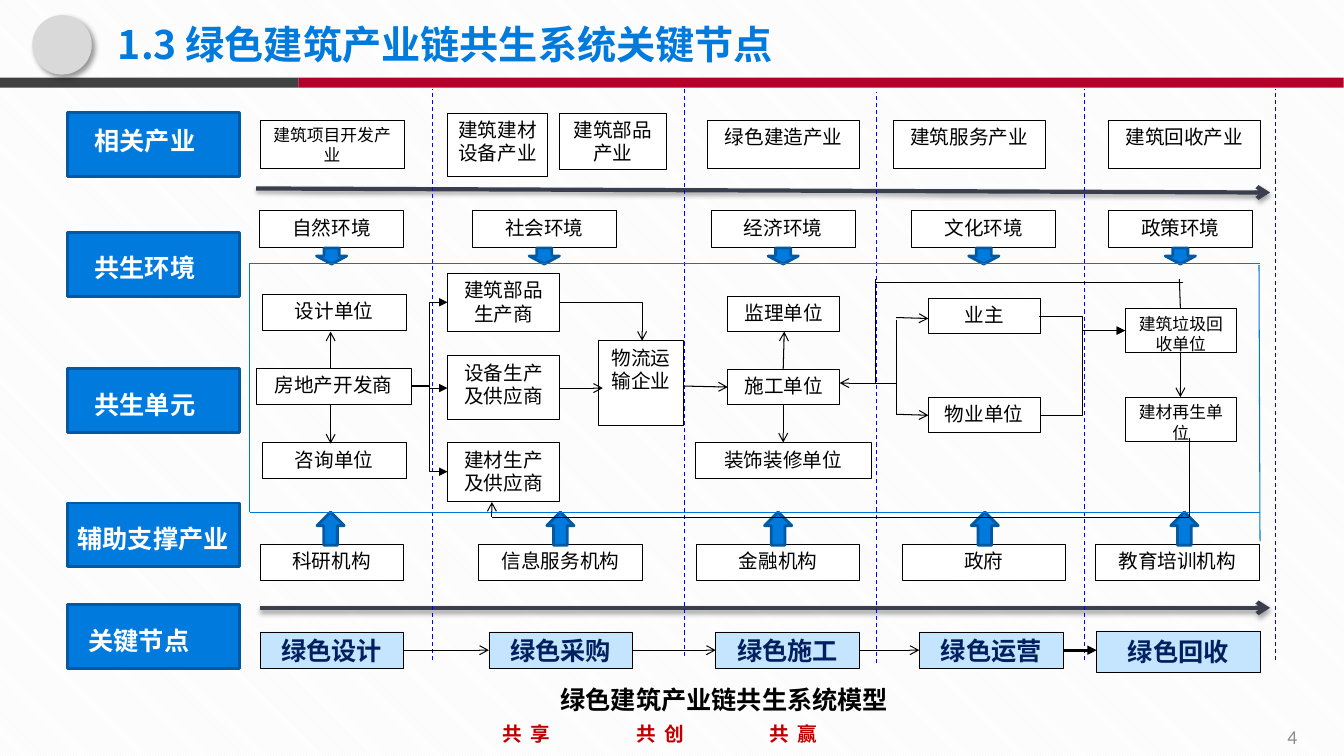
from itertools import pairwise

from lxml import etree
from pptx import Presentation
from pptx import util as u
from pptx.dml.color import RGBColor
from pptx.enum import dml, lang, shapes, text
from pptx.oxml import ns

CELL = 0.1
NOTO, CALIBRI = "Noto Sans CJK SC", "Calibri"
BLACK, WHITE = RGBColor(0, 0, 0), RGBColor(255, 255, 255)
BLUE, BLUE_EDGE = RGBColor(0x00, 0x7A, 0xDD), RGBColor(0x00, 0x5A, 0xA3)
FRAME_BLUE, DASH_BLUE = RGBColor(0x00, 0x77, 0xD8), RGBColor(0, 0, 0xFF)
PALE_BLUE, NAVY = RGBColor(0xC5, 0xE5, 0xFF), RGBColor(0x00, 0x20, 0x60)
CRIMSON, RED = RGBColor(0xB5, 0x00, 0x29), RGBColor(0xC0, 0, 0)
CHARCOAL, SLATE = RGBColor(0x40, 0x40, 0x40), RGBColor(0x3B, 0x3E, 0x4D)
SILVER, GREY = RGBColor(0xD9, 0xD9, 0xD9), RGBColor(0x8C, 0x8C, 0x8C)
HATCH = RGBColor(0xF2, 0xF2, 0xF2)
RECT, ELBOW = shapes.MSO_SHAPE.RECTANGLE, shapes.MSO_CONNECTOR.ELBOW
STRAIGHT = shapes.MSO_CONNECTOR.STRAIGHT
LEFT, CENTER, RIGHT = text.PP_ALIGN.LEFT, text.PP_ALIGN.CENTER, text.PP_ALIGN.RIGHT

LABELS = [("相关产业", 11.2, 8.4, 11.9), ("共生环境", 23.1, 8.4, 24.5),
          ("共生单元", 36.6, 8.4, 38.1), ("辅助支撑产业", 49.9, 6.7, 51.4),
          ("关键节点", 60, 7.8, 61.5)]
INDUSTRIES = [("建筑项目开发产业", 25.8, 11.9, 14.3, 4.8, 12),
              ("建筑建材设备产业", 44.4, 11.2, 9.9, 6.3, 14),
              ("建筑部品产业", 55.5, 11.2, 10.6, 5.6, 14),
              ("绿色建造产业", 70.2, 11.9, 15.1, 4.8, 14),
              ("建筑服务产业", 88.6, 11.9, 15.1, 4.8, 14),
              ("建筑回收产业", 110, 11.9, 15, 4.8, 14)]
ENVIRONMENTS = [("自然环境", 32.9), ("社会环境", 54), ("经济环境", 77.7),
                ("文化环境", 97.6), ("政策环境", 117.1)]
UNITS = [("设计单位", 26, 29.2, 14.3, 3.6, 14), ("房地产开发商", 25.4, 36.5, 15.4, 3.6, 14),
         ("咨询单位", 26, 43.9, 14.3, 3.6, 14), ("建筑部品生产商", 44.4, 27.1, 11.1, 5.8, 14),
         ("设备生产及供应商", 44.4, 35.3, 11.1, 6.3, 14),
         ("建材生产及供应商", 44.4, 43.9, 11.1, 5.8, 14),
         ("物流运输企业", 59.4, 33.8, 8.4, 8.4, 14), ("监理单位", 72.2, 29.4, 11.1, 3.5, 14),
         ("施工单位", 72.2, 36.6, 11.1, 3.5, 14), ("装饰装修单位", 69, 43.9, 17.4, 3.6, 14),
         ("业主", 92.1, 29.6, 11.1, 3.5, 14), ("物业单位", 92.1, 39.4, 11.1, 3.5, 14),
         ("建筑垃圾回收单位", 111.6, 30.6, 11.1, 4.4, 12),
         ("建材再生单位", 111.6, 39.4, 11.1, 4.4, 12)]
SUPPORTS = [("科研机构", 32.9, 14.2, 32.8), ("信息服务机构", 55.6, 16.2, 55.6),
            ("金融机构", 77.2, 16.2, 77.2), ("政府", 97.6, 16.2, 97.7),
            ("教育培训机构", 116.8, 16.2, 117.5)]
KEY_NODES = [("绿色设计", 25.8, 62.7, 14.2, 3.6), ("绿色采购", 48.5, 62.7, 14.2, 3.6),
             ("绿色施工", 71, 62.7, 14.3, 3.6), ("绿色运营", 91.2, 62.7, 14.3, 3.6),
             ("绿色回收", 108.8, 62.6, 16.2, 4.1)]
DIVIDERS = [(42.9, 8.8), (67.9, 8.4), (126.5, 8.8), (107.6, 8.8), (87, 9.1)]
FRAME = [(24.8, 26.1, 24.8, 50.8), (24.8, 26.1, 125, 26.1),
         (124.9, 26.3, 125, 53.7), (24.8, 50.8, 125, 50.8)]
FLOWS = [(67.9, 38.3, 72.2, 38.4), (77.7, 36.6, 77.8, 32.9), (55.5, 38.5, 59.8, 38.5),
         (32.8, 36.6, 32.8, 32.9), (77.7, 40.1, 77.7, 43.9), (32.8, 40.2, 32.8, 44),
         (88.9, 41.1, 92.1, 41.2), (88.9, 31.5, 92.1, 31.6), (88.9, 38, 83.3, 38),
         (117.1, 35, 117.1, 39.4), (48.8, 51.3, 48.8, 49.8)]
LINKS = [(88.9, 31.7, 88.9, 41.1), (117, 27.7, 117.1, 30.6), (86.8, 28, 117.4, 28),
         (86.9, 27.7, 86.9, 38), (48.8, 51.3, 118, 51.3), (118, 43.5, 118, 51.3)]
BRANCHES = [(40.8, 38.3, 44.4, 30), (40.8, 38.3, 44.4, 46.8), (40.8, 38.3, 44.4, 38.5),
            (103.1, 31.4, 111.6, 32.8), (103.2, 41.2, 111.6, 32.8)]


def cells(*counts):
    """Turn counts of grid cells into slide lengths."""
    return [u.Inches(count * CELL) for count in counts]


def write(shape, words, size, color, bold=False, font=NOTO, align=LEFT,
          anchor=text.MSO_ANCHOR.TOP):
    """Fill a shape with one formatted paragraph."""
    frame = shape.text_frame
    frame.text = words
    frame.word_wrap = True
    frame.auto_size = text.MSO_AUTO_SIZE.NONE
    frame.vertical_anchor = anchor
    para = frame.paragraphs[0]
    para.alignment = align
    for span in para.runs:
        span.font.size, span.font.bold, span.font.name = u.Pt(size), bold, font
        span.font.color.rgb = color
        span.font.language_id = lang.MSO_LANGUAGE_ID.SIMPLIFIED_CHINESE
        if font == NOTO:
            properties = span.font._element
            properties.find(ns.qn("a:latin")).addnext(
                properties.makeelement(ns.qn("a:ea"), {"typeface": font}))
    return para


def add_text(slide, area, words, *style, **options):
    """Add a text box."""
    return write(slide.shapes.add_textbox(*cells(*area)), words, *style, **options)


def add_block(slide, kind, area, fill, edge=None, weight=0.5):
    """Add a plain filled shape."""
    block = slide.shapes.add_shape(kind, *cells(*area))
    block.shadow.inherit = False
    block.fill.solid()
    block.fill.fore_color.rgb = fill
    if edge is None:
        block.line.fill.background()
    else:
        block.line.color.rgb = edge
        block.line.width = u.Pt(weight)
    return block


def add_box(slide, words, area, size, font=NOTO):
    """Add a white box with a thin border and centred text."""
    box = add_block(slide, RECT, area, WHITE, BLACK)
    write(box, words, size, BLACK, font=font, align=CENTER)


def add_line(slide, ends, color=BLACK, weight=0.75, head=None, dash=None, kind=STRAIGHT):
    """Add a connector, with an arrowhead when one is named."""
    line = slide.shapes.add_connector(kind, *cells(*ends))
    line.line.color.rgb = color
    line.line.width = u.Pt(weight)
    if dash:
        line.line.dash_style = dash
    if head:
        etree.SubElement(line.line._get_or_add_ln(), ns.qn("a:tailEnd"), type=head)
    etree.SubElement(line._element.spPr, ns.qn("a:effectLst"))
    return line


def cast_shadow(shape, opacity, blur, distance, angle):
    """Give a shape a soft black shadow."""
    effects = shape._element.spPr.find(ns.qn("a:effectLst"))
    shadow = etree.SubElement(effects, ns.qn("a:outerShdw"), blurRad=str(u.Pt(blur)),
                              dist=str(u.Pt(distance)), dir=str(angle * 60000), rotWithShape="0")
    color = etree.SubElement(shadow, ns.qn("a:srgbClr"), val=str(BLACK))
    etree.SubElement(color, ns.qn("a:alpha"), val=str(opacity * 1000))


def add_banner(slide):
    """Draw the background, title band, motto and page number."""
    fill = slide.background.fill
    fill.patterned()
    fill.pattern = dml.MSO_PATTERN.LIGHT_DOWNWARD_DIAGONAL
    fill.fore_color.rgb, fill.back_color.rgb = HATCH, WHITE
    motto = add_text(slide, (48.9, 71.1, 39, 3.5), "共享\t共创\t共赢", 14, RED, True)
    tabs = etree.SubElement(motto._p.get_or_add_pPr(), ns.qn("a:tabLst"))
    for stop in cells(13.3, 26.5):
        etree.SubElement(tabs, ns.qn("a:tab"), pos=str(stop), algn="l")
    for span in motto.runs:
        span.font._element.set("spc", "600")
    add_block(slide, RECT, (29.6, 7.7, 103.7, 1), CRIMSON)
    add_block(slide, RECT, (0, 7.7, 29.6, 1), CHARCOAL)
    cast_shadow(add_block(slide, shapes.MSO_SHAPE.OVAL, (3.2, 1.5, 5.9, 5.9), SILVER), 40, 4, 3, 45)
    title = slide.shapes.title
    title.left, title.top, title.width, title.height = cells(10.7, 1.2, 99.3, 6.3)
    write(title, "1.3 绿色建筑产业链共生系统关键节点", 28, BLUE, True, anchor=text.MSO_ANCHOR.MIDDLE)
    add_text(slide, (98.6, 71.1, 31.1, 4), "4", 14, GREY, font=CALIBRI, align=RIGHT,
             anchor=text.MSO_ANCHOR.MIDDLE)


def add_rows(slide):
    """Draw the row labels and the boxes of every row."""
    for words, top, left, text_top in LABELS:
        add_block(slide, RECT, (6.7, top, 17.1, 6.3), BLUE, BLUE_EDGE, 2)
        add_text(slide, (left, text_top, 18.7, 4), words, 18, WHITE, True)
    for ends in [(25.8, 60.3, 126, 60.3), (25.4, 18.7, 126, 19.1)]:
        cast_shadow(add_line(slide, ends, SLATE, 3, "arrow"), 35, 3.1, 1.8, 90)
    for left, top in DIVIDERS:
        add_line(slide, (left, top + 56.7, left, top), DASH_BLUE, dash=dml.MSO_LINE.DASH)
    for words, *area, size in INDUSTRIES:
        add_box(slide, words, area, size)
    for words, middle in ENVIRONMENTS:
        add_box(slide, words, (middle - 7.15, 20.9, 14.3, 3.6), 14)
        add_block(slide, shapes.MSO_SHAPE.DOWN_ARROW, (middle - 1.5, 24.6, 3, 1.6), BLUE, BLUE_EDGE, 2)
    for words, *area, size in UNITS:
        add_box(slide, words, area, size, CALIBRI)
    for words, middle, width, arrow in SUPPORTS:
        add_box(slide, words, (middle - width / 2, 54, width, 3.6), 14, CALIBRI)
        add_block(slide, shapes.MSO_SHAPE.UP_ARROW, (arrow - 1.35, 50.8, 2.7, 3.3), BLUE, BLUE_EDGE, 2)
    for words, *area in KEY_NODES:
        node = add_block(slide, RECT, area, PALE_BLUE, BLACK)
        write(node, words, 18, NAVY, True, CALIBRI, CENTER, text.MSO_ANCHOR.MIDDLE)


def add_flows(slide):
    """Draw the frame and the links between units and key nodes."""
    for ends in FRAME:
        add_line(slide, ends, FRAME_BLUE)
    for ends in FLOWS:
        add_line(slide, ends, head="arrow")
    for ends in LINKS:
        add_line(slide, ends)
    for ends in BRANCHES:
        add_line(slide, ends, head="triangle", kind=ELBOW)
    corner = add_line(slide, (55.5, 30, 63.7, 33.8), head="arrow", kind=ELBOW)
    corner._element.spPr.find(ns.qn("a:prstGeom")).set("prst", "bentConnector2")
    for start, end in pairwise(KEY_NODES):
        weight, head = (2.25, "triangle") if end is KEY_NODES[-1] else (0.75, "arrow")
        add_line(slide, (start[1] + start[3], 64.5, end[1], 64.5), BLACK, weight, head)


def main():
    """Build the slide and save the deck."""
    deck = Presentation()
    deck.slide_width, deck.slide_height = cells(133.33, 75)
    page = deck.slides.add_slide(deck.slide_layouts[5])
    add_banner(page)
    add_rows(page)
    add_flows(page)
    add_text(page, (45.7, 67.4, 52.3, 4), "绿色建筑产业链共生系统模型", 18, BLACK, True, align=CENTER)
    deck.save("out.pptx")


if __name__ == "__main__":
    main()
